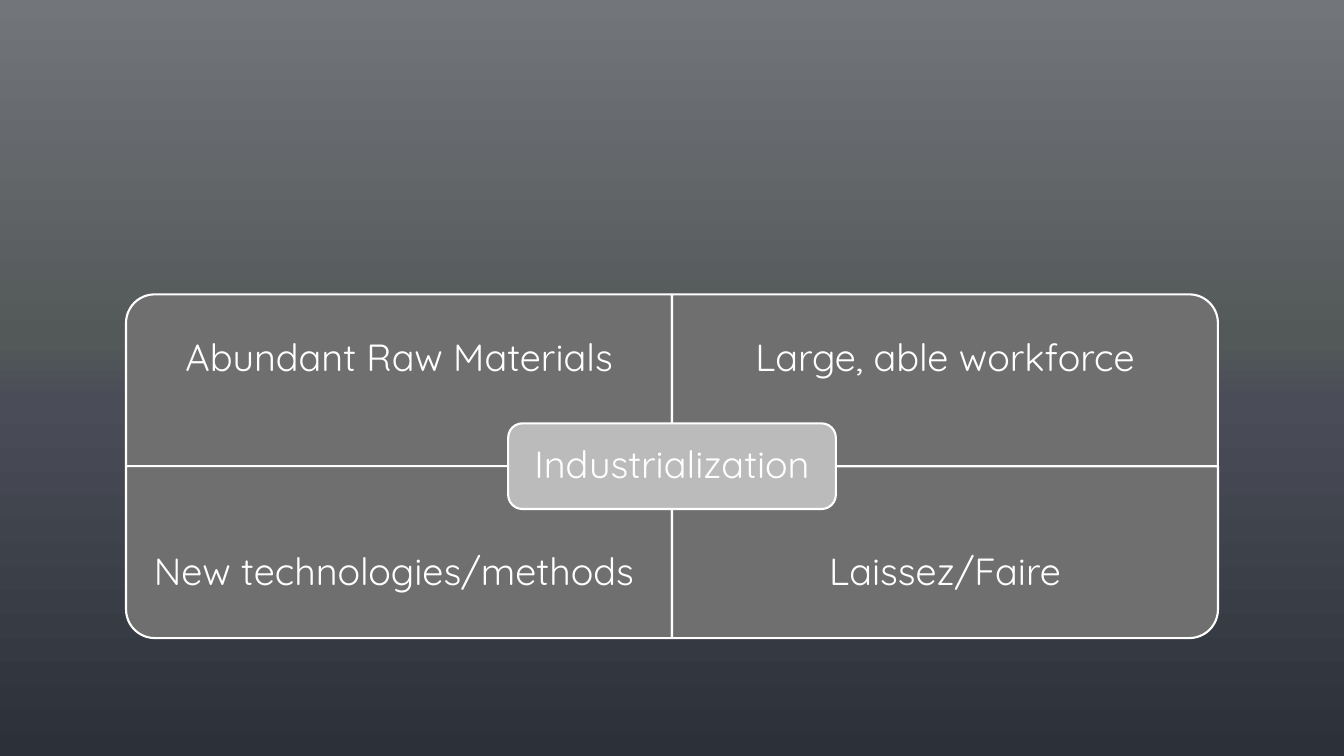
from copy import deepcopy
from dataclasses import dataclass

from pptx import Presentation
from pptx.dml.color import RGBColor
from pptx.enum.shapes import MSO_SHAPE
from pptx.enum.text import MSO_ANCHOR, PP_ALIGN
from pptx.slide import Slide
from pptx.util import Inches, Pt

ONE_ROUND_CORNER = MSO_SHAPE.ROUND_1_RECTANGLE
ROUNDED = MSO_SHAPE.ROUNDED_RECTANGLE
MIDDLE = MSO_ANCHOR.MIDDLE
CENTER = PP_ALIGN.CENTER

FONT = "Quicksand"
WHITE = "FFFFFF"
FACTOR_FILL = "6F6F6F"
CORE_FILL = "BBBBBB"
SKY = [(0, "72757A"), (0.45, "535859"), (0.53, "4A4D57"), (1, "2C3139")]

MATRIX_LEFT, MATRIX_TOP = 1.25, 2.92
FACTOR_WIDTH, FACTOR_HEIGHT = 5.415, 1.705
LABEL_HEIGHT = 1.28
CORE_WIDTH, CORE_HEIGHT = 3.25, 0.85
CORE_MARGIN = 0.04


@dataclass(frozen=True)
class Box:
    left: float
    top: float
    width: float
    height: float

    def inches(self) -> tuple:
        return tuple(Inches(v) for v in (self.left, self.top, self.width, self.height))

    def turned(self) -> "Box":
        shift = (self.width - self.height) / 2
        return Box(self.left + shift, self.top - shift, self.height, self.width)


@dataclass(frozen=True)
class Factor:
    label: str
    column: int
    row: int
    rotation: int


FACTORS = [
    Factor("Abundant Raw Materials", 0, 0, 270),
    Factor("Large, able workforce", 1, 0, 0),
    Factor("New technologies/methods ", 0, 1, 180),
    Factor("Laissez/Faire", 1, 1, 90),
]


def color(hex_code: str) -> RGBColor:
    return RGBColor.from_string(hex_code)


def paint_background(slide: Slide) -> None:
    fill = slide.background.fill
    fill.gradient()
    fill.gradient_angle = 270
    stop_list = slide.background.fill._fill._gradFill.gsLst
    for _ in SKY[2:]:
        stop_list.append(deepcopy(stop_list[0]))
    for stop, (position, shade) in zip(fill.gradient_stops, SKY):
        stop.color.rgb = color(shade)
        stop.position = position


def add_panel(slide: Slide, outline: MSO_SHAPE, box: Box, shade: str, rotation: int = 0) -> None:
    frame = box.turned() if rotation % 180 else box
    panel = slide.shapes.add_shape(outline, *frame.inches())
    panel.rotation = rotation
    panel.shadow.inherit = False
    panel.fill.solid()
    panel.fill.fore_color.rgb = color(shade)
    panel.line.color.rgb = color(WHITE)
    panel.line.width = Pt(1.5)


def add_label(slide: Slide, wording: str, box: Box, inset: float) -> None:
    frame = slide.shapes.add_textbox(*box.inches()).text_frame
    frame.word_wrap = True
    frame.vertical_anchor = MIDDLE
    frame.margin_left = frame.margin_right = Inches(inset)
    frame.margin_top = frame.margin_bottom = Inches(inset)
    frame.text = wording
    paragraph = frame.paragraphs[0]
    paragraph.alignment = CENTER
    paragraph.line_spacing = 0.9
    font = paragraph.runs[0].font
    font.name = FONT
    font.size = Pt(27)
    font.color.rgb = color(WHITE)


def add_factor(slide: Slide, factor: Factor) -> None:
    left = MATRIX_LEFT + factor.column * FACTOR_WIDTH
    top = MATRIX_TOP + factor.row * FACTOR_HEIGHT
    label_top = top + factor.row * (FACTOR_HEIGHT - LABEL_HEIGHT)
    add_panel(slide, ONE_ROUND_CORNER, Box(left, top, FACTOR_WIDTH, FACTOR_HEIGHT),
              FACTOR_FILL, factor.rotation)
    add_label(slide, factor.label, Box(left, label_top, FACTOR_WIDTH, LABEL_HEIGHT), 0.21)


def add_core(slide: Slide) -> None:
    left = MATRIX_LEFT + FACTOR_WIDTH - CORE_WIDTH / 2
    top = MATRIX_TOP + FACTOR_HEIGHT - CORE_HEIGHT / 2
    add_panel(slide, ROUNDED, Box(left, top, CORE_WIDTH, CORE_HEIGHT), CORE_FILL)
    label_box = Box(left + CORE_MARGIN, top + CORE_MARGIN,
                    CORE_WIDTH - 2 * CORE_MARGIN, CORE_HEIGHT - 2 * CORE_MARGIN)
    add_label(slide, "Industrialization", label_box, 0.11)


def main() -> None:
    deck = Presentation()
    deck.slide_width, deck.slide_height = Inches(13.33), Inches(7.5)
    slide = deck.slides.add_slide(deck.slide_layouts[6])
    paint_background(slide)
    for factor in FACTORS:
        add_factor(slide, factor)
    add_core(slide)
    deck.save("out.pptx")


if __name__ == "__main__":
    main()
